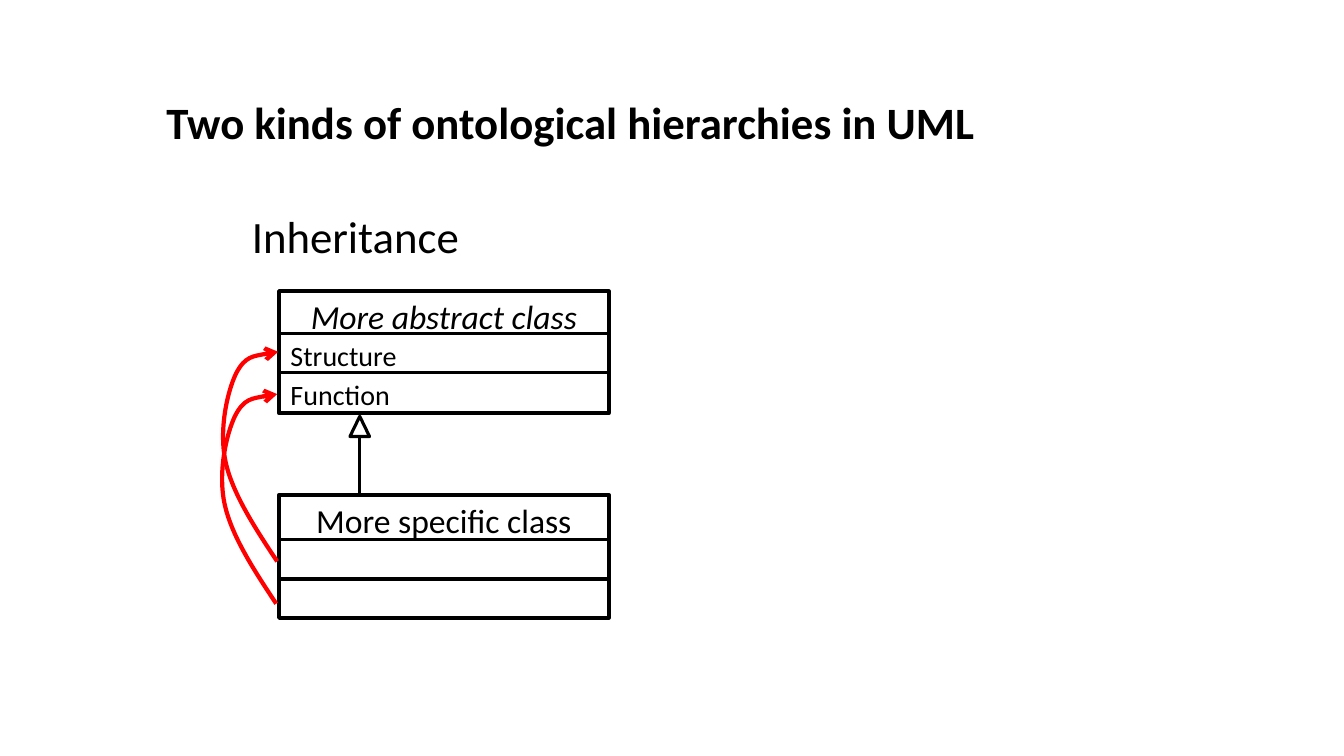
from dataclasses import dataclass

from lxml import etree
from pptx import Presentation
from pptx.dml.color import RGBColor
from pptx.enum.shapes import MSO_CONNECTOR as Link, MSO_SHAPE as Kind
from pptx.enum.text import MSO_ANCHOR as Anchor, MSO_AUTO_SIZE as Fit, PP_ALIGN as Align
from pptx.oxml.ns import qn
from pptx.util import Pt

BLACK, WHITE, RED = "000000", "FFFFFF", "FF0000"
LEFT, WIDE = 199.4, 235.4  # shared by both class boxes
STEM = 257  # x of the inheritance arrow


@dataclass
class Box:
    name: str
    top: float
    high: float
    rules: tuple[float, ...]
    labels: tuple[str, ...] = ()
    slant: bool = False


@dataclass
class Shift:
    dx: float
    dy: float


BOXES = [
    Box("More specific class", 353.5, 87.8, (385.6, 413.6)),
    Box("More abstract class", 208, 87.1, (238, 266.4), ("Structure", "Function"), True),
]
# Start point, then three points for each Bezier segment
CURVE = [(198, 401), (182.2, 377.3), (166.3, 352.8), (161.3, 330.5),
         (156.2, 308.2), (162, 280.8), (168.5, 267.1),
         (175, 254.2), (188.6, 252.7), (198.7, 251.3)]
SHIFTS = [Shift(0, 0), Shift(-0.7, 30.2)]


def paint(item, color: str) -> None:
    """Give a line, fill or font a solid colour."""
    if hasattr(item, "solid"):
        item.solid()
        item.fore_color.rgb = RGBColor.from_string(color)
    else:
        item.color.rgb = RGBColor.from_string(color)


def stroke(line, color: str, width: float) -> None:
    paint(line, color)
    line.width = Pt(width)


def write(shape, text: str, size: float, align=Align.LEFT,
          bold: bool = False, slant: bool = False) -> None:
    frame = shape.text_frame
    frame.text = text
    frame.vertical_anchor = Anchor.TOP
    par = frame.paragraphs[0]
    par.alignment = align
    font = par.font
    font.name, font.size = "Calibri", Pt(size)
    font.bold, font.italic = bold, slant
    paint(font, BLACK)


def label(slide, text: str, x: float, y: float, w: float, h: float,
          size: float, wrap: bool) -> None:
    box = slide.shapes.add_textbox(Pt(x), Pt(y), Pt(w), Pt(h))
    write(box, text, size)
    box.text_frame.word_wrap = wrap
    box.text_frame.auto_size = Fit.SHAPE_TO_FIT_TEXT


def rule(slide, x1: float, y1: float, x2: float, y2: float) -> None:
    line = slide.shapes.add_connector(Link.STRAIGHT, Pt(x1), Pt(y1), Pt(x2), Pt(y2))
    stroke(line.line, BLACK, 2.25)
    etree.SubElement(line._element.spPr, qn("a:effectLst"))


def draw(slide, box: Box) -> None:
    rect = slide.shapes.add_shape(Kind.RECTANGLE, Pt(LEFT), Pt(box.top), Pt(WIDE), Pt(box.high))
    rect.shadow.inherit = False
    rect.fill.background()
    stroke(rect.line, BLACK, 3)
    write(rect, box.name, 24, Align.CENTER, slant=box.slant)
    for y in box.rules:
        rule(slide, LEFT, y, LEFT + WIDE, y)
    for text, y in zip(box.labels, box.rules):
        label(slide, text, LEFT + 1, y, 193.7, 31.5, 20, True)


def curve(slide, shift: Shift) -> None:
    first, *rest = [(Pt(x + shift.dx), Pt(y + shift.dy)) for x, y in CURVE]
    form = slide.shapes.build_freeform(*first)
    form.add_line_segments(rest, close=False)
    shape = form.convert_to_shape()
    shape.shadow.inherit = False
    shape.fill.background()
    stroke(shape.line, RED, 3)
    # Turn each three straight steps into one Bezier segment
    steps = list(shape._element.iter(qn("a:lnTo")))
    for i in range(0, len(steps), 3):
        bend = etree.Element(qn("a:cubicBezTo"))
        steps[i].addprevious(bend)
        for step in steps[i:i + 3]:
            bend.append(step[0])
            step.getparent().remove(step)
    # Arrowhead at the end
    etree.SubElement(shape.line._get_or_add_ln(), qn("a:tailEnd"), type="arrow")


def main() -> None:
    deck = Presentation()
    deck.slide_width, deck.slide_height = Pt(960), Pt(540)
    slide = deck.slides.add_slide(deck.slide_layouts[5])

    # Headings
    title = slide.shapes.title
    title.left, title.top, title.width, title.height = Pt(111.6), Pt(64), Pt(597.6), Pt(46)
    write(title, "Two kinds of ontological hierarchies in UML", 32, bold=True)
    title.text_frame.word_wrap = False
    title.text_frame.auto_size = Fit.SHAPE_TO_FIT_TEXT
    label(slide, "Inheritance", 172.8, 145.4, 167, 46, 32, False)

    # Class boxes
    for box in BOXES:
        draw(slide, box)

    # Inheritance arrow
    head = slide.shapes.add_shape(Kind.ISOSCELES_TRIANGLE, Pt(STEM - 7), Pt(297.4), Pt(14), Pt(14.4))
    head.shadow.inherit = False
    paint(head.fill, WHITE)
    stroke(head.line, BLACK, 2.25)
    rule(slide, STEM, 353, STEM, 311.8)

    # Inherited parts
    for shift in SHIFTS:
        curve(slide, shift)

    deck.save("out.pptx")


if __name__ == "__main__":
    main()
